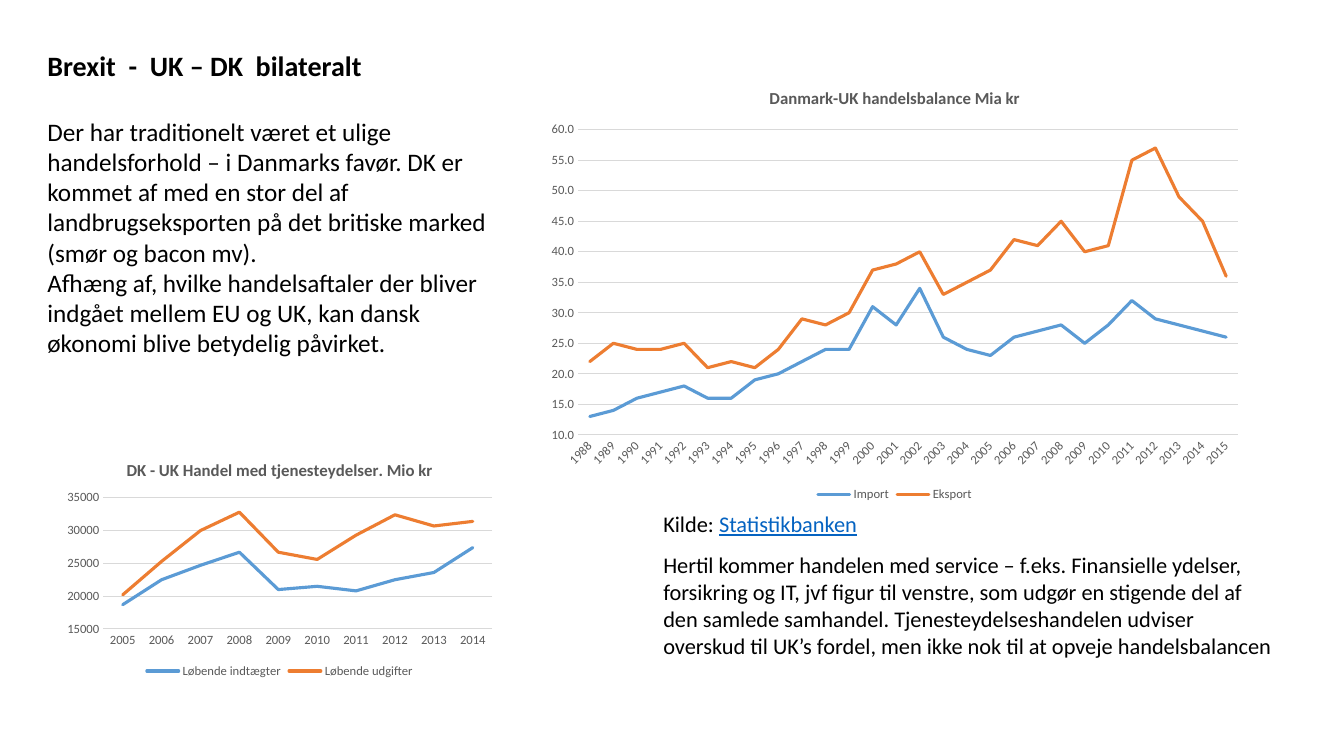
from pptx import Presentation
from pptx.chart.data import CategoryChartData as ChartData
from pptx.dml.color import RGBColor as Rgb
from pptx.enum.chart import XL_CHART_TYPE as Kind, XL_LEGEND_POSITION as Place
from pptx.enum.chart import XL_MARKER_STYLE as Marker, XL_TICK_MARK as Tick
from pptx.enum.text import MSO_ANCHOR as Anchor, MSO_AUTO_SIZE as Fit, PP_ALIGN as Align
from pptx.oxml.xmlchemy import OxmlElement as Node
from pptx.util import Inches, Pt

FONT = "Calibri"
COLORS = {"ink": "000000", "gray": "595959", "rule": "D9D9D9", "link": "0563C1",
          "blue": "5B9BD5", "orange": "ED7D31"}

TITLE = "Brexit  -  UK – DK  bilateralt"
BODY = [
    "Der har traditionelt været et ulige handelsforhold – i Danmarks favør. "
    "DK er kommet af med en stor del af landbrugseksporten på det britiske "
    "marked (smør og bacon mv).",
    "Afhæng af, hvilke handelsaftaler der bliver indgået mellem EU og UK, "
    "kan dansk økonomi blive betydelig påvirket.",
]
NOTE = ("Hertil kommer handelen med service – f.eks. Finansielle ydelser, "
        "forsikring og IT, jvf figur til venstre, som udgør en stigende del af "
        "den samlede samhandel. Tjenesteydelseshandelen udviser overskud til "
        "UK’s fordel, men ikke nok til at opveje handelsbalancen")

GOODS = {
    "title": "Danmark-UK handelsbalance Mia kr",
    "years": range(1988, 2016),
    "scale": (10, 60, 5),
    "format": "0.0",
    "turn": -45,
    "series": {
        "Import": [13, 14, 16, 17, 18, 16, 16, 19, 20, 22, 24, 24, 31, 28,
                   34, 26, 24, 23, 26, 27, 28, 25, 28, 32, 29, 28, 27, 26],
        "Eksport": [22, 25, 24, 24, 25, 21, 22, 21, 24, 29, 28, 30, 37, 38,
                    40, 33, 35, 37, 42, 41, 45, 40, 41, 55, 57, 49, 45, 36],
    },
}
TRADE = {
    "title": "DK - UK Handel med tjenesteydelser. Mio kr",
    "years": range(2005, 2015),
    "scale": (15000, 35000, 5000),
    "format": "General",
    "turn": 0,
    "series": {
        "Løbende indtægter": [18700, 22500, 24700, 26700, 21000,
                              21500, 20800, 22500, 23600, 27400],
        "Løbende udgifter": [20200, 25300, 30000, 32800, 26700,
                             25600, 29300, 32400, 30700, 31400],
    },
}


def color(name):
    """Return the named colour."""
    return Rgb.from_string(COLORS[name])


def style(font, size, tint, bold=False):
    """Set face, size, colour and weight of a font."""
    font.name, font.size, font.bold = FONT, Pt(size), bold
    font.color.rgb = color(tint)


def stroke(line, tint, width):
    """Set colour and width of a line."""
    line.color.rgb = color(tint)
    line.width = Pt(width)


def write(shape, box, lines, size, bold=False):
    """Place a text shape in its box and fill it with plain left-aligned lines."""
    shape.left, shape.top, shape.width, shape.height = map(Inches, box)
    frame = shape.text_frame
    frame.text = "\n".join(lines)
    frame.word_wrap = True
    frame.auto_size = Fit.NONE
    frame.vertical_anchor = Anchor.TOP
    for para in frame.paragraphs:
        para.alignment = Align.LEFT
        para.space_before = Pt(0)
        props = para._p.get_or_add_pPr()
        props.set("marL", "0")
        props.set("indent", "0")
        props.append(Node("a:buNone"))
        for run in para.runs:
            style(run.font, size, "ink", bold)
    return frame


def add_text(slide, box, line):
    """Add a text box with one paragraph."""
    shape = slide.shapes.add_textbox(*map(Inches, box))
    return write(shape, box, [line], 16)


def add_source(slide, box):
    """Add the source line with its underlined name."""
    para = add_text(slide, box, "Kilde: ").paragraphs[0]
    run = para.add_run()
    run.text = "Statistikbanken"
    style(run.font, 16, "link")
    run.font.underline = True


def add_lines(slide, box, facts):
    """Add a titled line chart with a legend below."""
    data = ChartData(number_format=facts["format"])
    data.categories = [str(year) for year in facts["years"]]
    for name, vals in facts["series"].items():
        data.add_series(name, vals)
    chart = slide.shapes.add_chart(Kind.LINE, *map(Inches, box), data).chart
    style(chart.font, 10, "ink")

    title = chart.chart_title.text_frame
    title.text = facts["title"]
    style(title.paragraphs[0].runs[0].font, 12, "gray", True)
    chart.chart_title.include_in_layout = False

    chart.has_legend = True
    chart.legend.position = Place.BOTTOM
    chart.legend.include_in_layout = False
    style(chart.legend.font, 9, "gray")

    cat, val = chart.category_axis, chart.value_axis
    for axis in (cat, val):
        axis.major_tick_mark = axis.minor_tick_mark = Tick.NONE
        style(axis.tick_labels.font, 9, "gray")
    cat._element.txPr.bodyPr.set("rot", str(facts["turn"] * 60000))
    stroke(cat.format.line, "rule", 0.75)
    val.format.line.fill.background()
    val.minimum_scale, val.maximum_scale, val.major_unit = facts["scale"]
    val.tick_labels.number_format = facts["format"]
    val.tick_labels.number_format_is_linked = False
    stroke(val.major_gridlines.format.line, "rule", 0.75)

    plot = chart.plots[0]
    plot.vary_by_categories = False
    for line, tint in zip(plot.series, ("blue", "orange")):
        line.smooth = False
        line.marker.style = Marker.NONE
        stroke(line.format.line, tint, 2.25)
        line.format.line._get_or_add_ln().set("cap", "rnd")


def main():
    """Build the slide and save it."""
    deck = Presentation()
    deck.slide_width, deck.slide_height = Inches(13.33), Inches(7.5)
    slide = deck.slides.add_slide(deck.slide_layouts[1])
    add_lines(slide, (5.33, 0.69, 7.09, 4.33), GOODS)
    add_source(slide, (6.48, 5.01, 3.38, 0.37))
    write(slide.shapes.title, (0.37, 0.43, 3.9, 0.44), [TITLE], 20, True)
    write(slide.placeholders[1], (0.37, 1.1, 4.58, 2.52), BODY, 18)
    add_text(slide, (6.48, 5.42, 6.28, 1.18), NOTE)
    add_lines(slide, (0.58, 4.42, 4.39, 2.35), TRADE)
    deck.save("out.pptx")


if __name__ == "__main__":
    main()
